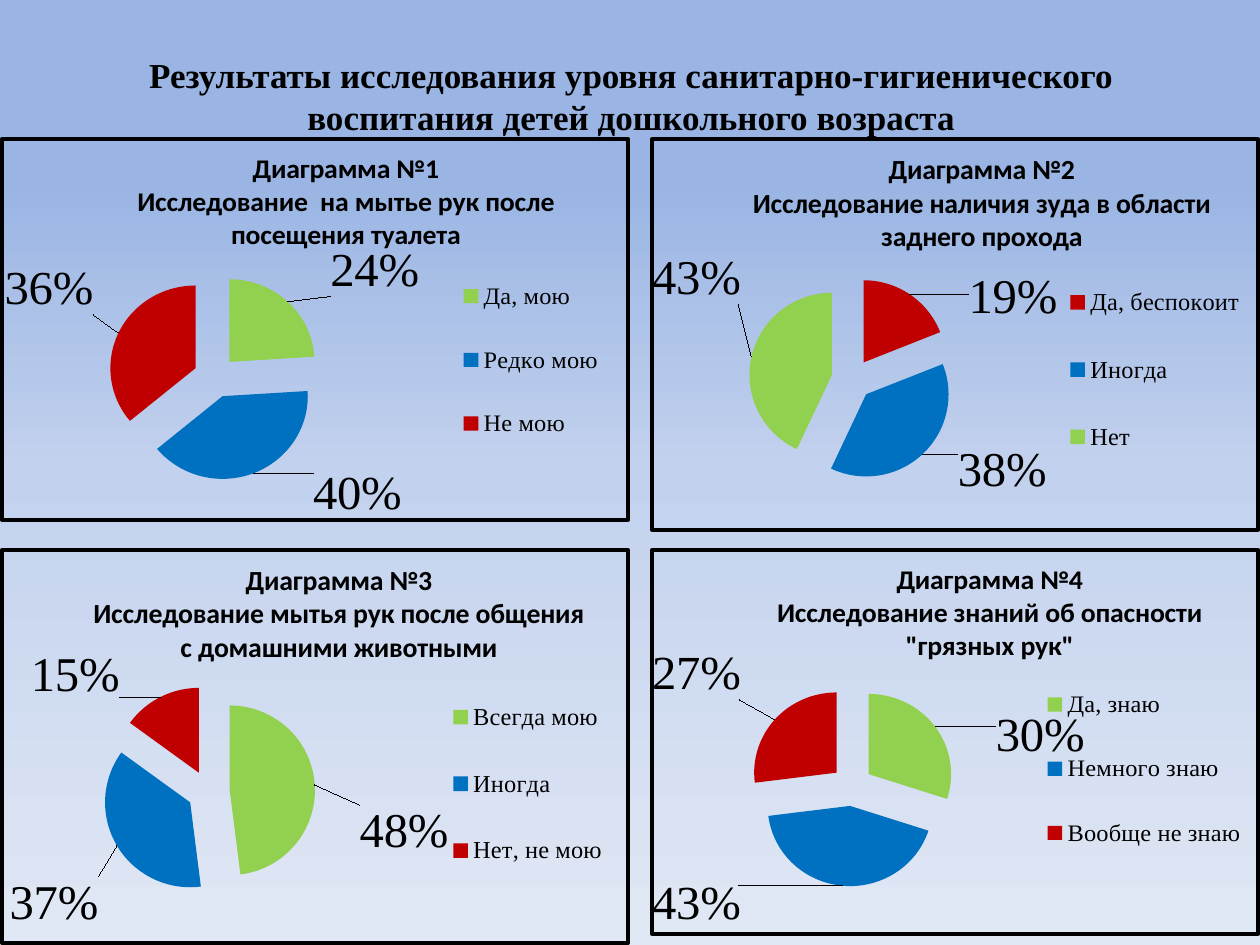
from dataclasses import dataclass

import pptx
import pptx.chart.data
import pptx.dml.color
import pptx.enum.chart
import pptx.enum.text
import pptx.oxml
import pptx.oxml.ns
import pptx.util
from pptx.util import Inches


@dataclass(frozen=True)
class Theme:
    black: str = "000000"
    green: str = "92D050"
    blue: str = "0070C0"
    red: str = "C00000"
    background: tuple = ((0, "9AB5E4"), (19, "9AB5E4"), (50, "C2D1ED"), (100, "E1E8F5"))
    serif: str = "Times New Roman"
    sans: str = "Calibri"
    heading: int = 20
    chart_title: int = 16
    legend: int = 14
    label: int = 28
    base: int = 10
    border: float = 2.25


theme = Theme()


def set_font(font, name, size, bold=False):
    values = {"name": name, "size": pptx.util.Pt(size), "bold": bold}
    for key, value in values.items():
        setattr(font, key, value)
    font.color.rgb = pptx.dml.color.RGBColor.from_string(theme.black)


def make_layout(x, y, w=None, h=None, inner=False, edge=True):
    """Return a c:layout; edge measures from the chart edge, otherwise from the default place."""
    parts = '<c:layoutTarget val="inner"/>' if inner else ""
    if edge:
        parts += '<c:xMode val="edge"/><c:yMode val="edge"/>'
    for tag, value in zip("xywh", (x, y, w, h)):
        if value is not None:
            parts += f'<c:{tag} val="{value}"/>'
    return pptx.oxml.parse_xml(
        f'<c:layout {pptx.oxml.ns.nsdecls("c")}><c:manualLayout>{parts}</c:manualLayout></c:layout>'
    )


qn = pptx.oxml.ns.qn
deck = pptx.Presentation()
deck.slide_width, deck.slide_height = Inches(10), Inches(7.5)
page = deck.slides.add_slide(deck.slide_layouts[6])

fill = page.background.fill
fill.gradient()
fill.gradient_angle = 270
stops = next(page.element.iter(qn("a:gsLst")))
for stop in list(stops):
    stops.remove(stop)
for position, color in theme.background:
    stops.append(pptx.oxml.parse_xml(
        f'<a:gs {pptx.oxml.ns.nsdecls("a")} pos="{position * 1000}"><a:srgbClr val="{color}"/></a:gs>'
    ))

box = page.shapes.add_textbox(Inches(0.51), Inches(0.13), Inches(9), Inches(1.25))
frame = box.text_frame
frame.word_wrap = True
frame.vertical_anchor = pptx.enum.text.MSO_ANCHOR.MIDDLE
para = frame.paragraphs[0]
para.alignment = pptx.enum.text.PP_ALIGN.CENTER
span = para.add_run()
span.text = "Результаты исследования уровня санитарно-гигиенического воспитания детей дошкольного возраста"
set_font(span.font, theme.serif, theme.heading, True)

columns = ((0, 5), (5.16, 4.84))
rows = ((1.09, 3.13), (4.35, 3.15))
usual_colors = (theme.green, theme.blue, theme.red)
usual_plot = (0.16, 0.32, 0.34, 0.59)
surveys = [
    {
        "title": "Исследование  на мытье рук после посещения туалета",
        "answers": {"Да, мою": 0.24, "Редко мою": 0.4, "Не мою": 0.36},
        "colors": usual_colors,
        "plot": (0.17, 0.33, 0.34, 0.59),
        "title_at": (0.21, 0.02),
        "legend_at": (0.7, 0.28, 0.29, 0.6),
        "label_shifts": ((0.06, 0), (0.09, -0.02), (-0.03, -0.04)),
    },
    {
        "title": "Исследование наличия зуда в области заднего прохода",
        "answers": {"Да, беспокоит": 0.19, "Иногда": 0.38, "Нет": 0.43},
        "colors": (theme.red, theme.blue, theme.green),
        "plot": usual_plot,
        "title_at": (0.16, 0.02),
        "legend_at": (0.67, 0.28, 0.32, 0.62),
        "label_shifts": ((0.09, 0.09), (0.05, -0.04), (-0.01, -0.13)),
    },
    {
        "title": "Исследование мытья рук после общения с домашними животными",
        "answers": {"Всегда мою": 0.48, "Иногда": 0.37, "Нет, не мою": 0.15},
        "colors": usual_colors,
        "plot": usual_plot,
        "title_at": (0.14, 0.02),
        "legend_at": (0.69, 0.29, 0.3, 0.61),
        "label_shifts": ((0.06, 0.12), (-0.02, 0.07), (-0.06, 0.03)),
    },
    {
        "title": "Исследование знаний об опасности \"грязных рук\"",
        "answers": {"Да, знаю": 0.3, "Немного знаю": 0.43, "Вообще не знаю": 0.27},
        "colors": usual_colors,
        "plot": usual_plot,
        "title_at": (0.2, 0.02),
        "legend_at": (0.67, 0.27, 0.32, 0.6),
        "label_shifts": ((0.09, 0.1), (-0.17, -0.04), (-0.05, -0.04)),
    },
]

for index, survey in enumerate(surveys):
    left, width = columns[index % 2]
    top, height = rows[index // 2]
    data = pptx.chart.data.CategoryChartData(number_format="0%")
    data.categories = list(survey["answers"])
    data.add_series("Series 1", list(survey["answers"].values()))
    chart = page.shapes.add_chart(
        pptx.enum.chart.XL_CHART_TYPE.PIE,
        Inches(left), Inches(top), Inches(width), Inches(height), data,
    ).chart
    set_font(chart.font, theme.sans, theme.base)

    chart.has_title = True
    title = chart.chart_title
    title.include_in_layout = False
    title.text_frame.text = f"Диаграмма №{index + 1}\n{survey['title']}"
    for para in title.text_frame.paragraphs:
        set_font(para.font, theme.sans, theme.chart_title, True)
        for span in para.runs:
            set_font(span.font, theme.sans, theme.chart_title, True)

    chart.has_legend = True
    legend = chart.legend
    legend.position = pptx.enum.chart.XL_LEGEND_POSITION.RIGHT
    legend.include_in_layout = False
    set_font(legend.font, theme.serif, theme.legend)

    plot = chart.plots[0]
    plot.vary_by_categories = True
    series = plot.series[0]
    best_fit = pptx.enum.chart.XL_LABEL_POSITION.BEST_FIT
    labels = series.data_labels
    label_format = {"show_value": True, "number_format": "0%",
                    "number_format_is_linked": False, "position": best_fit}
    for key, value in label_format.items():
        setattr(labels, key, value)
    set_font(labels.font, theme.serif, theme.label)
    for number, color in enumerate(survey["colors"]):
        point = series.points[number]
        point.format.fill.solid()
        point.format.fill.fore_color.rgb = pptx.dml.color.RGBColor.from_string(color)
        set_font(point.data_label.font, theme.serif, theme.label)
        point.data_label.position = best_fit

    # Manual layouts, slice explosion and the frame have no public methods.
    space = chart.element
    for tag, layout in (
        ("c:title", make_layout(*survey["title_at"])),
        ("c:legend", make_layout(*survey["legend_at"])),
        ("c:plotArea", make_layout(*survey["plot"], inner=True)),
    ):
        parent = next(space.iter(qn(tag)))
        for old in parent.findall(qn("c:layout")):
            parent.remove(old)
        before = {"c:title": "c:tx", "c:legend": "c:legendPos"}.get(tag)
        if before:
            parent.find(qn(before)).addnext(layout)
        else:
            parent.insert(0, layout)
    for label, shift in zip(space.iter(qn("c:dLbl")), survey["label_shifts"]):
        label.find(qn("c:idx")).addnext(make_layout(*shift, edge=False))
    series_xml = next(space.iter(qn("c:ser")))
    series_xml.find(qn("c:tx")).addnext(pptx.oxml.parse_xml(
        f'<c:explosion {pptx.oxml.ns.nsdecls("c")} val="25"/>'
    ))
    space.find(qn("c:chart")).addnext(pptx.oxml.parse_xml(
        f'<c:spPr {pptx.oxml.ns.nsdecls("c", "a")}><a:noFill/>'
        f'<a:ln w="{pptx.util.Pt(theme.border)}"><a:solidFill><a:srgbClr val="{theme.black}"/>'
        '</a:solidFill></a:ln></c:spPr>'
    ))

deck.save("out.pptx")
